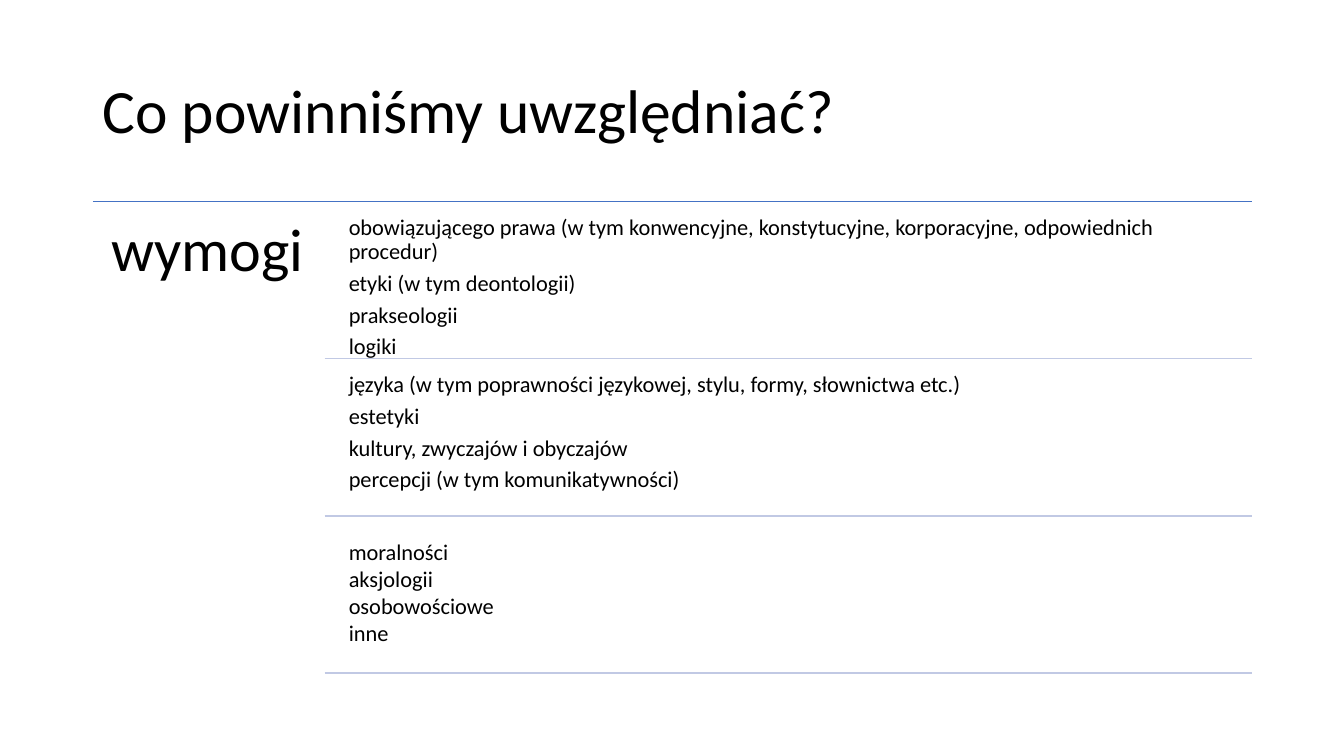
import pptx
import pptx.dml.color
import pptx.enum.shapes
import pptx.enum.text
import pptx.oxml.ns
import pptx.util
from lxml import etree

Cm, Pt = pptx.util.Cm, pptx.util.Pt

presentation = pptx.Presentation()
presentation.slide_width = Cm(33.87)
presentation.slide_height = Cm(19.05)
slide = presentation.slides.add_slide(presentation.slide_layouts[6])


def add_text(lines, left, top, width, height, size, color="000000", inset=0.18,
             line_spacing=0.9, space_after=0, anchor="TOP"):
    frame = slide.shapes.add_textbox(Cm(left), Cm(top), Cm(width), Cm(height)).text_frame
    frame.word_wrap = True
    frame.vertical_anchor = pptx.enum.text.MSO_ANCHOR[anchor]
    frame.margin_left = frame.margin_right = Cm(inset)
    frame.margin_top = frame.margin_bottom = Cm(inset)
    for index, line in enumerate(lines):
        paragraph = frame.paragraphs[0] if index == 0 else frame.add_paragraph()
        paragraph.line_spacing = line_spacing
        paragraph.space_after = Pt(space_after)
        run = paragraph.add_run()
        run.text = line
        run.font.name = "Calibri"
        run.font.size = Pt(size)
        run.font.color.rgb = pptx.dml.color.RGBColor.from_string(color)


def add_rule(left, top, color):
    rule = slide.shapes.add_connector(
        pptx.enum.shapes.MSO_CONNECTOR.STRAIGHT, Cm(left), Cm(top), Cm(RIGHT), Cm(top))
    rule.line.color.rgb = pptx.dml.color.RGBColor.from_string(color)
    rule.line.width = Pt(1)
    etree.SubElement(rule._element.spPr, pptx.oxml.ns.qn("a:effectLst"))


LEFT, RIGHT, TOP = 2.34, 31.55, 5.08
ROW_LEFT, ROW_TEXT_LEFT, ROW_STEP = 8.18, 8.61, 3.96

# Title
add_text(["Co powinniśmy uwzględniać?"], LEFT, 1.01, RIGHT - LEFT, 3.68, 44,
         inset=0.25, anchor="MIDDLE")

# Heading column
add_rule(LEFT, TOP, "4472C4")
add_text(["wymogi"], LEFT, TOP, 5.84, 12.07, 43, inset=0.46)

# Rows of requirements: lines, offset from the row top, line spacing, space after
rows = [
    (["obowiązującego prawa (w tym konwencyjne, konstytucyjne, korporacyjne, "
      "odpowiednich procedur)",
      "etyki (w tym deontologii)", "prakseologii", "logiki"], 0.18, 0.9, 5.5),
    (["języka (w tym poprawności językowej, stylu, formy, słownictwa etc.)",
      "estetyki", "kultury, zwyczajów i obyczajów",
      "percepcji (w tym komunikatywności)"], 0.18, 0.9, 5.5),
    (["moralności", "aksjologii", "osobowościowe", "inne"], 0.38, 1.0, 0),
]
for index, (lines, offset, line_spacing, space_after) in enumerate(rows):
    row_top = TOP + index * ROW_STEP
    add_text(lines, ROW_TEXT_LEFT, row_top + offset, RIGHT - ROW_TEXT_LEFT, 3.78, 16,
             line_spacing=line_spacing, space_after=space_after)
    add_rule(ROW_LEFT, row_top + ROW_STEP, "C1C9E4")

presentation.save("out.pptx")
